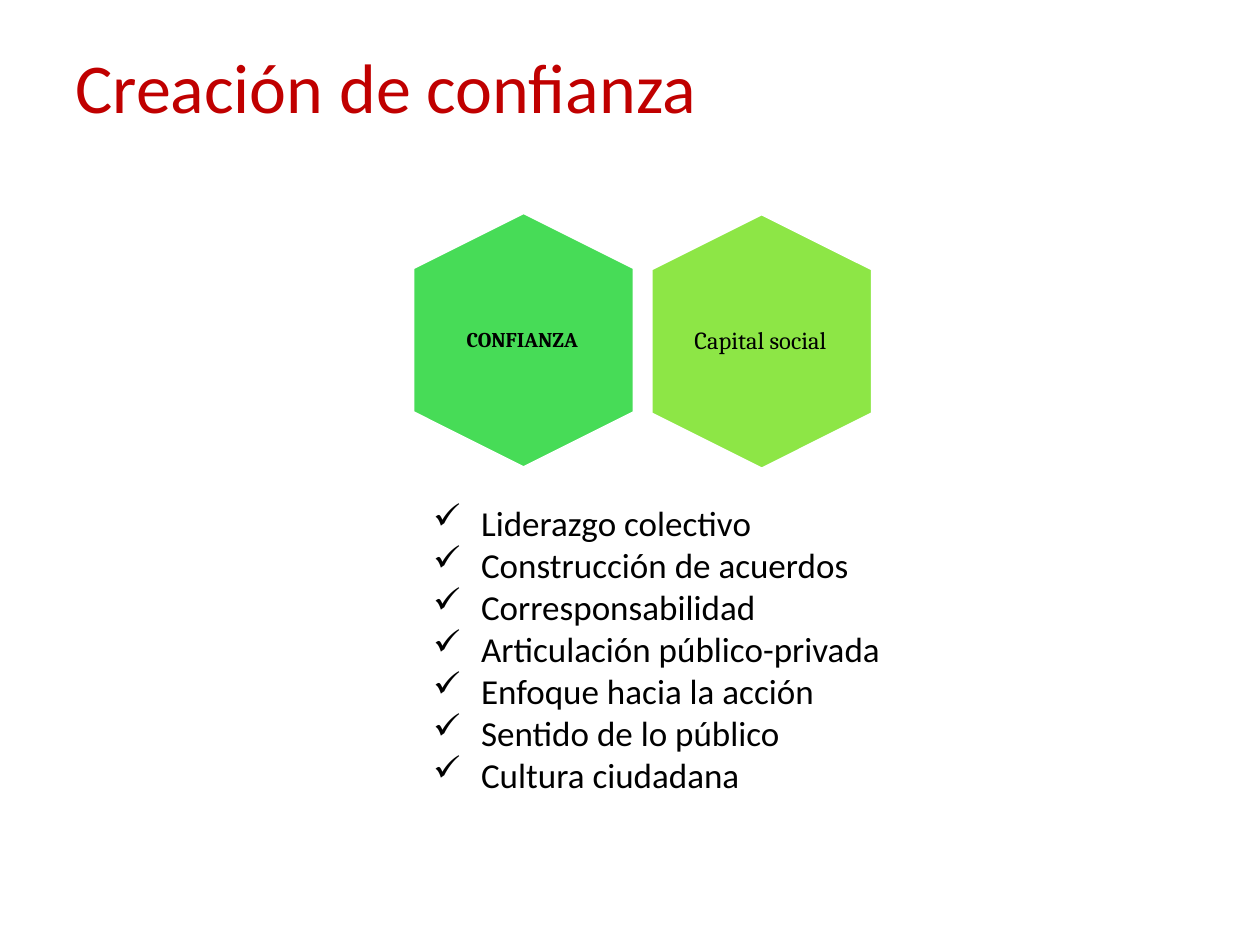
from lxml import etree
from pptx import Presentation
from pptx.dml.color import RGBColor
from pptx.enum import shapes, text
from pptx.oxml import ns
from pptx.util import Inches, Pt

RED = RGBColor(0xC0, 0x00, 0x00)
BLACK = RGBColor(0x00, 0x00, 0x00)
WHITE = RGBColor(0xFF, 0xFF, 0xFF)
GREEN = RGBColor(0x47, 0xDC, 0x57)
LIME = RGBColor(0x8D, 0xE6, 0x46)

presentation = Presentation()
presentation.slide_width = Inches(10)
presentation.slide_height = Inches(7.5)
slide = presentation.slides.add_slide(presentation.slide_layouts[6])


def add_text(lines, left, top, width, height, size, font="Calibri", color=BLACK,
             bold=False, centered=False, margin=None, bullet=None):
    """Add a text box with one paragraph per line; centered applies both ways."""
    box = slide.shapes.add_textbox(Inches(left), Inches(top), Inches(width), Inches(height))
    frame = box.text_frame
    frame.word_wrap = True
    if margin is not None:
        frame.margin_left = frame.margin_right = Inches(margin)
        frame.margin_top = frame.margin_bottom = Inches(margin)
    if centered:
        frame.vertical_anchor = text.MSO_ANCHOR.MIDDLE
    frame.text = "\n".join(lines)
    for paragraph in frame.paragraphs:
        if centered:
            paragraph.alignment = text.PP_ALIGN.CENTER
            paragraph.line_spacing = 0.9
        if bullet:
            properties = paragraph._p.get_or_add_pPr()
            properties.set("marL", str(Inches(0.88)))
            properties.set("indent", str(Inches(-0.38)))
            etree.SubElement(properties, ns.qn("a:buChar")).set("char", bullet)
        for run in paragraph.runs:
            run.font.name = font
            run.font.size = Pt(size)
            run.font.bold = bold
            run.font.color.rgb = color


add_text(["Creación de confianza"], 0.5, 0.3, 9, 0.77, size=40, color=RED)

# The hexagons stand on a point, so each is turned by a quarter
HEXAGON_WIDTH, HEXAGON_HEIGHT = 2.03, 1.76
LABEL_WIDTH, LABEL_HEIGHT = 1.21, 1.39
hexagons = [
    ("CONFIANZA", 3.14, 1.82, GREEN, 12, True, 0.05),
    ("Capital social", 5.03, 1.83, LIME, 14, False, 0),
]
for label, left, top, color, size, bold, margin in hexagons:
    hexagon = slide.shapes.add_shape(
        shapes.MSO_SHAPE.HEXAGON, Inches(left), Inches(top),
        Inches(HEXAGON_WIDTH), Inches(HEXAGON_HEIGHT))
    hexagon.rotation = 90
    hexagon.adjustments[0] = 0.25
    hexagon.shadow.inherit = False
    hexagon.fill.solid()
    hexagon.fill.fore_color.rgb = color
    hexagon.line.color.rgb = WHITE
    hexagon.line.width = Pt(2)
    add_text([label], left + 0.4, top + (HEXAGON_HEIGHT - LABEL_HEIGHT) / 2,
             LABEL_WIDTH, LABEL_HEIGHT, size=size, font="Cambria", bold=bold,
             centered=True, margin=margin)

principles = [
    "Liderazgo colectivo",
    "Construcción de acuerdos",
    "Corresponsabilidad",
    "Articulación público-privada",
    "Enfoque hacia la acción",
    "Sentido de lo público",
    "Cultura ciudadana",
]
add_text(principles, 2.84, 3.93, 4.63, 2.79, size=20, bullet="✓")

presentation.save("out.pptx")
